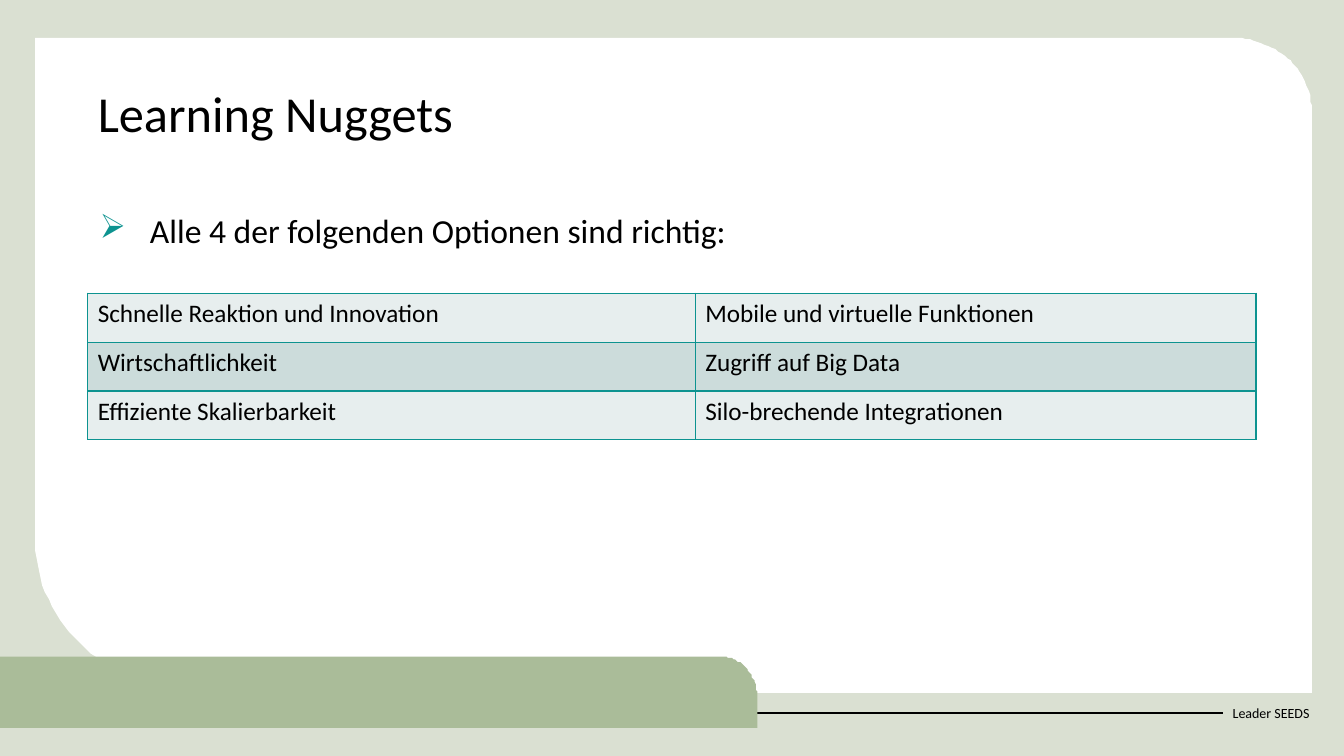
from collections import namedtuple
from math import cos, pi, sin

from lxml.etree import SubElement
from pptx import Presentation
from pptx.dml.color import RGBColor
from pptx.enum.shapes import MSO_CONNECTOR, MSO_SHAPE
from pptx.enum.text import MSO_ANCHOR as Anchor, PP_ALIGN as Align
from pptx.oxml.ns import qn
from pptx.util import Pt

BLACK = RGBColor(0x00, 0x00, 0x00)
WHITE = RGBColor(0xFF, 0xFF, 0xFF)
PALE_GREEN = RGBColor(0xDA, 0xE0, 0xD2)
GREEN = RGBColor(0xAA, 0xBC, 0x99)
TEAL = RGBColor(0x0D, 0x93, 0x90)
ROW_FILLS = [RGBColor(0xE7, 0xEE, 0xEE), RGBColor(0xCC, 0xDC, 0xDB)]

Box = namedtuple("Box", "left top width height")
PAGE = Box(0, 0, 960, 540)
PANEL = Box(25.2, 26.64, 911.5, 468)
BAND = Box(0, 468.7, 540.7, 51.8)
FOOTER = Box(873.4, 494.6, 72.7, 28.8)
TITLE = Box(62.64, 59.8, 834.5, 63.4)
BODY = Box(62.64, 149.8, 834.5, 52)
TABLE = Box(62.64, 209.5, 834.5, 104.7)
COLUMN_SHARES = [0.52, 0.48]

OPTIONS = [
    ["Schnelle Reaktion und Innovation", "Mobile und virtuelle Funktionen"],
    ["Wirtschaftlichkeit", "Zugriff auf Big Data"],
    ["Effiziente Skalierbarkeit", "Silo-brechende Integrationen"],
]


def points(box):
    return [Pt(value) for value in box]


def paint(shape, color):
    shape.shadow.inherit = False
    shape.fill.solid()
    shape.fill.fore_color.rgb = color
    shape.line.fill.background()


def write(para, text, size, **formats):
    for name, value in formats.items():
        setattr(para, name, value)
    span = para.add_run()
    span.text = text
    for name, value in {"name": "Calibri", "size": Pt(size), "bold": False}.items():
        setattr(span.font, name, value)
    span.font.color.rgb = BLACK


def corner_arc(center_x, center_y, radius_x, radius_y, start, steps=32):
    """Points of a quarter ellipse, clockwise from the start angle."""
    angles = [start + pi / 2 * step / steps for step in range(steps + 1)]
    return [(center_x + radius_x * cos(a), center_y + radius_y * sin(a)) for a in angles]


def add_rounded(slide, box, color, top_right, bottom_left=None):
    """Box with a rounded top right corner and, if given, bottom left corner."""
    right, bottom = box.left + box.width, box.top + box.height
    radius_x, radius_y = top_right
    outline = [(box.left, box.top)]
    outline += corner_arc(right - radius_x, box.top + radius_y, radius_x, radius_y, -pi / 2)
    outline.append((right, bottom))
    if bottom_left:
        radius_x, radius_y = bottom_left
        outline += corner_arc(box.left + radius_x, bottom - radius_y, radius_x, radius_y, pi / 2)
    else:
        outline.append((box.left, bottom))
    builder = slide.shapes.build_freeform(*outline[0], scale=Pt(1))
    builder.add_line_segments(outline[1:], close=True)
    paint(builder.convert_to_shape(), color)


def add_backdrop(slide, box):
    paint(slide.shapes.add_shape(MSO_SHAPE.RECTANGLE, *points(box)), PALE_GREEN)
    add_rounded(slide, PANEL, WHITE, (58.3, 51.1), (122.4, 107.3))


def add_footer(slide, box):
    label = slide.shapes.add_textbox(*points(box))
    label.text_frame.word_wrap = True
    label.text_frame.vertical_anchor = Anchor.MIDDLE
    write(label.text_frame.paragraphs[0], "Leader SEEDS", 10)
    # Rule from the page edge to the label, partly under the band
    rule_y = Pt(box.top + box.height / 2)
    rule = slide.shapes.add_connector(MSO_CONNECTOR.STRAIGHT, 0, rule_y, Pt(box.left), rule_y)
    rule.line.color.rgb = BLACK
    rule.line.width = Pt(1.5)
    SubElement(rule.element.spPr, qn("a:effectLst"))
    add_rounded(slide, BAND, GREEN, (27.4, 28.1))


def add_title(slide, box):
    title = slide.shapes.title
    for name, value in zip(box._fields, points(box)):
        setattr(title, name, value)
    title.text_frame.vertical_anchor = Anchor.TOP
    write(title.text_frame.paragraphs[0], "Learning Nuggets", 36,
          alignment=Align.LEFT, line_spacing=0.9)
    # Bring the title in front of the backdrop
    title.element.getparent().append(title.element)


def add_body(slide, box):
    body = slide.shapes.add_textbox(*points(box))
    body.text_frame.word_wrap = True
    para = body.text_frame.paragraphs[0]
    write(para, "Alle 4 der folgenden Optionen sind richtig:", 24, line_spacing=0.9)
    # Teal arrow bullet
    settings = para._p.get_or_add_pPr()
    settings.set("marL", str(Pt(37.4)))
    settings.set("indent", str(Pt(-36)))
    color = SubElement(settings, qn("a:buClr"))
    SubElement(color, qn("a:srgbClr"), val=str(TEAL))
    SubElement(settings, qn("a:buChar"), char="➢")


def add_borders(cell, color, width):
    settings = cell._tc.get_or_add_tcPr()
    for side in ("lnL", "lnR", "lnT", "lnB"):
        border = SubElement(settings, qn(f"a:{side}"), w=str(Pt(width)))
        fill = SubElement(border, qn("a:solidFill"))
        SubElement(fill, qn("a:srgbClr"), val=str(color))


def add_options(slide, box):
    frame = slide.shapes.add_table(len(OPTIONS), len(COLUMN_SHARES), *points(box))
    table = frame.table
    table.first_row = table.horz_banding = False
    for column, share in zip(table.columns, COLUMN_SHARES):
        column.width = Pt(box.width * share)
    for row_index, texts in enumerate(OPTIONS):
        for column_index, text in enumerate(texts):
            cell = table.cell(row_index, column_index)
            add_borders(cell, TEAL, 1)
            cell.fill.solid()
            cell.fill.fore_color.rgb = ROW_FILLS[row_index % 2]
            write(cell.text_frame.paragraphs[0], text, 18)


def main():
    deck = Presentation()
    deck.slide_width, deck.slide_height = Pt(PAGE.width), Pt(PAGE.height)
    slide = deck.slides.add_slide(deck.slide_layouts[5])
    add_backdrop(slide, PAGE)
    add_footer(slide, FOOTER)
    add_title(slide, TITLE)
    add_body(slide, BODY)
    add_options(slide, TABLE)
    deck.save("out.pptx")


if __name__ == "__main__":
    main()
